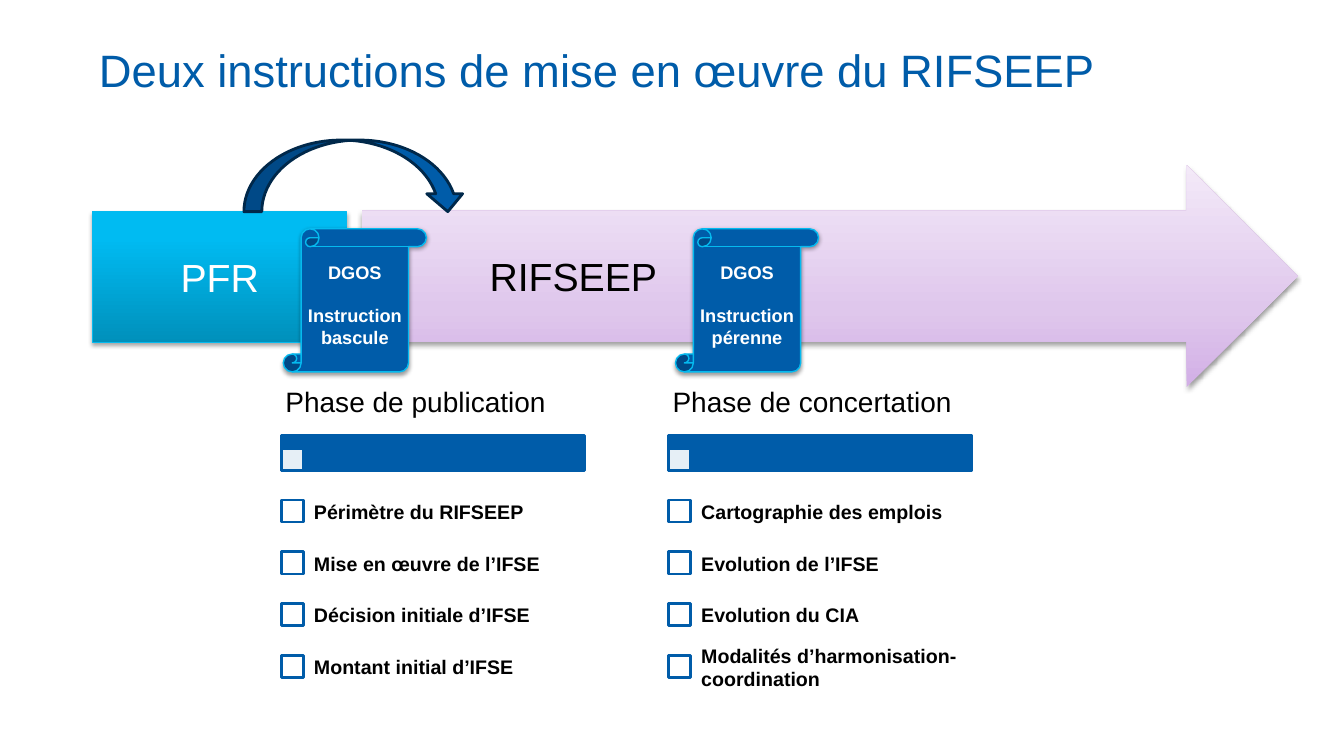
from dataclasses import dataclass
from typing import Any

from pptx import Presentation
from pptx import util as u
from pptx.dml.color import RGBColor
from pptx.enum import shapes, text
from pptx.oxml import parse_xml
from pptx.oxml.ns import nsdecls, qn

BLUE, CYAN, NAVY = "005CA9", "05BAEF", "00284A"
WHITE, BLACK = "FFFFFF", "000000"
KIND = shapes.MSO_SHAPE
LEFT, MID = text.PP_ALIGN.LEFT, text.PP_ALIGN.CENTER
WIDE, HIGH = u.Inches(13.33), u.Inches(7.5)


@dataclass
class Box:
    x: float
    y: float
    w: float
    h: float


@dataclass
class Look:
    fill: str = BLUE
    stops: tuple[tuple[int, str], ...] = ()
    alpha: int = 100
    line: str = ""
    weight: float = 0
    shade: int = 0
    drop: float = 1.6


@dataclass
class Type:
    size: float
    color: str
    bold: bool = False
    align: Any = LEFT
    pad: tuple[float, float] = (0.75, 0.67)
    lead: float = 1.0
    gap: float = 0
    shift: float = 0


@dataclass
class Phase:
    x: float
    name: str
    tasks: tuple[str, ...]


@dataclass
class Scroll:
    x: float
    name: str


LILAC = Look(stops=((0, "D2AFE6"), (35, "DFC7EC"), (100, "F3E9F8")), shade=38)
AQUA = Look(stops=((0, "0090BB"), (80, "00BBF2"), (100, "00BCF3")),
            line=CYAN, weight=0.75, shade=35, drop=1.8)
CURVE = Look(line=NAVY, weight=2)
PAPER = Look(line=CYAN, weight=1, shade=38)
BAR = Look(line=BLUE, weight=2)
CHECK = Look(fill=WHITE, line=BLUE, weight=2)
FAINT = Look(fill=WHITE, alpha=90, line=BLUE, weight=2)

TITLE = Type(32.4, BLUE, pad=(0.9, 0.8))
OLD = Type(28, WHITE, align=MID)
NEW = Type(28, BLACK, shift=8.75)
NOTE = Type(13, WHITE, bold=True, align=MID, pad=(0.3, 0.53), gap=15)
HEAD = Type(20, BLACK, pad=(0.3, 0.4), lead=0.9)
TASK = Type(14, BLACK, bold=True, pad=(0.83, 1.47))

SCROLLS = (Scroll(21.08, "Instruction bascule"),
           Scroll(50.26, "Instruction pérenne"))
PHASES = (
    Phase(20.93, "Phase de publication",
          ("Périmètre du RIFSEEP", "Mise en œuvre de l’IFSE",
           "Décision initiale d’IFSE", "Montant initial d’IFSE")),
    Phase(49.74, "Phase de concertation",
          ("Cartographie des emplois", "Evolution de l’IFSE",
           "Evolution du CIA", "Modalités d’harmonisation-coordination")),
)
SIDE, TALL, STEP = 1.65, 2.93, 6.87


def tint(code: str) -> RGBColor:
    return RGBColor.from_string(code)


def across(share: float) -> int:
    return u.Emu(round(WIDE * share / 100))


def down(share: float) -> int:
    return u.Emu(round(HIGH * share / 100))


def apply(thing: Any, values: dict[str, Any]) -> None:
    for key, value in values.items():
        setattr(thing, key, value)


def place(box: Box) -> tuple[int, int, int, int]:
    return across(box.x), down(box.y), across(box.w), down(box.h)


def node(tag: str, inner: str = "", **attrs: Any) -> Any:
    pairs = " ".join(f'{key}="{value}"' for key, value in attrs.items())
    return parse_xml(f'<a:{tag} {nsdecls("a")} {pairs}>{inner}</a:{tag}>')


def paint(shape: Any, look: Look) -> None:
    shape.shadow.inherit = False
    part = shape.element.spPr
    if look.stops:
        shape.fill.gradient()
        shape.fill.gradient_angle = 90
        ramp = part.find(".//" + qn("a:gsLst"))
        for stop in list(ramp):
            ramp.remove(stop)
        for pos, code in look.stops:
            ramp.append(node("gs", f'<a:srgbClr val="{code}"/>', pos=pos * 1000))
    else:
        shape.fill.solid()
        shape.fill.fore_color.rgb = tint(look.fill)
        if look.alpha < 100:
            color = part.find(qn("a:solidFill") + "/" + qn("a:srgbClr"))
            color.append(node("alpha", val=look.alpha * 1000))
    if look.line:
        shape.line.color.rgb = tint(look.line)
        shape.line.width = u.Pt(look.weight)
    else:
        shape.line.fill.background()
    if look.shade:
        inner = (f'<a:srgbClr val="{BLACK}">'
                 f'<a:alpha val="{look.shade * 1000}"/></a:srgbClr>')
        part.find(qn("a:effectLst")).append(
            node("outerShdw", inner, blurRad=u.Pt(3.1), dist=u.Pt(look.drop),
                 dir=5400000, rotWithShape=0))


def write(shape: Any, lines: tuple[str, ...], style: Type) -> None:
    frame = shape.text_frame
    side, edge = style.pad
    apply(frame, {
        "word_wrap": True, "auto_size": text.MSO_AUTO_SIZE.NONE,
        "vertical_anchor": text.MSO_ANCHOR.MIDDLE,
        "margin_left": across(side + style.shift), "margin_right": across(side),
        "margin_top": down(edge), "margin_bottom": down(edge)})
    for rank, line in enumerate(lines):
        para = frame.add_paragraph() if rank else frame.paragraphs[0]
        run = para.add_run()
        run.text = line
        apply(para, {"alignment": style.align, "line_spacing": style.lead,
                     "space_before": u.Pt(style.gap if rank else 0)})
        apply(run.font, {"name": "Arial", "size": u.Pt(style.size),
                         "bold": style.bold})
        run.font.color.rgb = tint(style.color)


def draw(tree: Any, kind: Any, box: Box, look: Look) -> Any:
    shape = tree.add_shape(kind, *place(box))
    paint(shape, look)
    return shape


def label(tree: Any, box: Box, line: str, style: Type) -> None:
    write(tree.add_textbox(*place(box)), (line,), style)


def list_phase(tree: Any, phase: Phase) -> None:
    group = tree.add_group_shape().shapes
    x = phase.x
    draw(group, KIND.RECTANGLE, Box(x, 57.6, 22.58, 4.67), BAR)
    draw(group, KIND.RECTANGLE, Box(x, 59.33, SIDE, TALL), FAINT)
    label(group, Box(x, 49.07, 22.58, 8.53), phase.name, HEAD)
    for row, task in enumerate(phase.tasks):
        y = 66.13 + row * STEP
        draw(group, KIND.RECTANGLE, Box(x, y, SIDE, TALL), CHECK)
        label(group, Box(x + 1.6, y - 1.9, 20.93, 6.8), task, TASK)


def main() -> None:
    deck = Presentation()
    apply(deck, {"slide_width": WIDE, "slide_height": HIGH})
    slide = deck.slides.add_slide(deck.slide_layouts[5])
    tree = slide.shapes
    title = tree.title
    apply(title, dict(zip(("left", "top", "width", "height"),
                          place(Box(6.45, 4.4, 90.02, 9.47)))))
    write(title, ("Deux instructions de mise en œuvre du RIFSEEP",), TITLE)
    arrow = draw(tree, KIND.RIGHT_ARROW, Box(26.93, 21.87, 69.62, 29.33), LILAC)
    arrow.adjustments[0] = 0.59
    write(arrow, ("RIFSEEP",), NEW)
    start = draw(tree, KIND.RECTANGLE, Box(6.9, 28, 18.9, 17.33), AQUA)
    write(start, ("PFR",), OLD)
    draw(tree, KIND.CURVED_DOWN_ARROW, Box(18.15, 18.53, 16.5, 9.47), CURVE)
    for scroll in SCROLLS:
        sheet = draw(tree, KIND.VERTICAL_SCROLL,
                     Box(scroll.x, 30.27, 10.65, 18.93), PAPER)
        write(sheet, ("DGOS", scroll.name), NOTE)
    for phase in PHASES:
        list_phase(tree, phase)
    deck.save("out.pptx")


if __name__ == "__main__":
    main()
